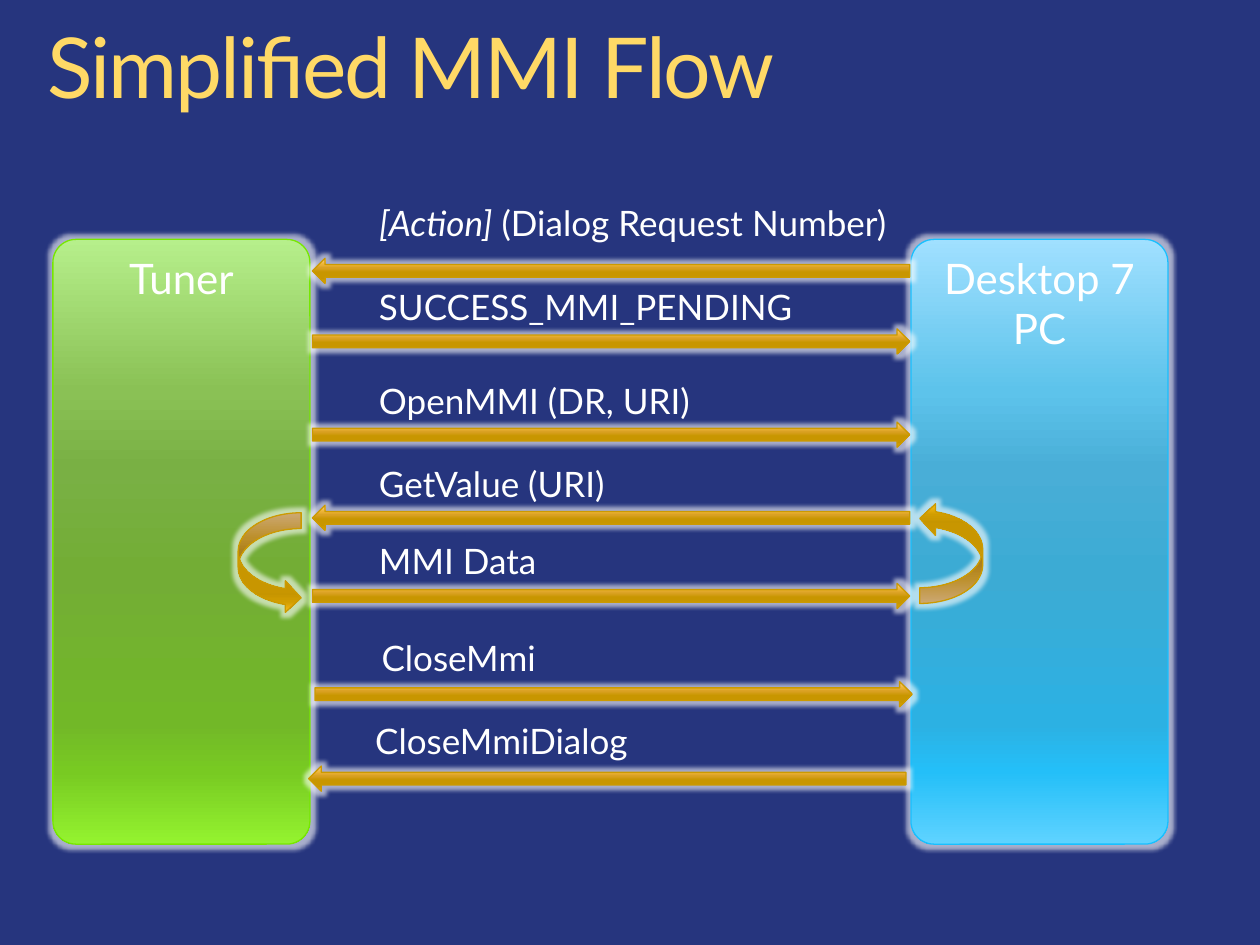
import pptx
import pptx.dml.color
import pptx.enum.shapes
import pptx.enum.text
import pptx.oxml
import pptx.oxml.ns
import pptx.util
from pptx.util import Inches

SHAPES = pptx.enum.shapes.MSO_SHAPE
FONT = "Lato"
NAMESPACE = pptx.oxml.ns.nsdecls("a")

STOPS = (0, 25, 38, 55, 80, 88, 100)
GREEN = list(zip(STOPS, "B6EF8B 8AC155 79B044 73AD35 72B828 78CA22 94F32F".split()))
BLUE = list(zip(STOPS, "A0E0FF 5DC3EB 49AED7 3CABD4 2CB1E3 24BFF8 5FD3FF".split()))
GOLD = list(zip(STOPS, "FFD390 ECB335 DAA123 C89600 C69500 D19D00 FFC018".split()))
TITLE_GRADIENT = [(0, "FFF2CC"), (41, "FFD966"), (100, "FFC000")]
GOLD_LINE = "CC9A00"

# label, label top, arrow shape, arrow left, arrow top
MESSAGES = [
    ("(Dialog Request Number)", 1.55, SHAPES.LEFT_ARROW, 2.48, 2.05),
    ("SUCCESS_MMI_PENDING", 2.22, SHAPES.RIGHT_ARROW, 2.48, 2.61),
    ("OpenMMI (DR, URI)", 2.96, SHAPES.RIGHT_ARROW, 2.48, 3.35),
    ("GetValue (URI)", 3.62, SHAPES.LEFT_ARROW, 2.48, 4.01),
    ("MMI Data", 4.23, SHAPES.RIGHT_ARROW, 2.48, 4.63),
    ("CloseMmi", 5.0, SHAPES.RIGHT_ARROW, 2.5, 5.41),
    ("CloseMmiDialog", 5.66, SHAPES.LEFT_ARROW, 2.45, 6.08),
]


def color(value):
    return pptx.dml.color.RGBColor.from_string(value)


def fill_gradient(fill, owner, stops):
    """Fill from top to bottom; owner is the XML element that holds the fill."""
    fill.gradient()
    fill.gradient_angle = 270
    stop_list = owner.find(".//" + pptx.oxml.ns.qn("a:gsLst"))
    for old_stop in list(stop_list):
        stop_list.remove(old_stop)
    for position, value in stops:
        stop_list.append(pptx.oxml.parse_xml(
            f'<a:gs {NAMESPACE} pos="{position * 1000}"><a:srgbClr val="{value}"/></a:gs>'))


def add_glow(shape):
    shape.shadow.inherit = False
    effects = shape._element.spPr.find(pptx.oxml.ns.qn("a:effectLst"))
    effects.append(pptx.oxml.parse_xml(
        f'<a:glow {NAMESPACE} rad="63500"><a:srgbClr val="FFFFFF">'
        '<a:alpha val="60000"/></a:srgbClr></a:glow>'))


def add_glowing_shape(page, kind, left, top, width, height, stops, line):
    shape = page.shapes.add_shape(
        kind, Inches(left), Inches(top), Inches(width), Inches(height))
    fill_gradient(shape.fill, shape._element.spPr, stops)
    shape.line.color.rgb = color(line)
    shape.line.width = pptx.util.Pt(0.75)
    add_glow(shape)
    return shape


def add_span(para, text, size, italic=None):
    span = para.add_run()
    span.text = text
    span.font.name = FONT
    span.font.size = pptx.util.Pt(size)
    span.font.italic = italic
    span.font.color.rgb = color("FFFFFF")
    return span


def add_text_box(page, left, top, width, height):
    box = page.shapes.add_textbox(
        Inches(left), Inches(top), Inches(width), Inches(height))
    box.text_frame.word_wrap = True
    return box.text_frame


def add_title(page, text):
    frame = add_text_box(page, 0.38, 0.21, 9.16, 0.73)
    frame.margin_left = frame.margin_right = 0
    frame.margin_top = frame.margin_bottom = 0
    para = frame.paragraphs[0]
    para.line_spacing = 0.9
    span = add_span(para, text, 48)
    properties = span.font._element
    fill_gradient(span.font.fill, properties, TITLE_GRADIENT)
    properties.set("spc", "-120")


def add_device(page, name, left, stops, line):
    card = add_glowing_shape(
        page, SHAPES.ROUNDED_RECTANGLE, left, 1.9, 2.04, 4.8, stops, line)
    card.adjustments[0] = 0.09
    frame = card.text_frame
    frame.word_wrap = True
    frame.vertical_anchor = pptx.enum.text.MSO_ANCHOR.TOP
    para = frame.paragraphs[0]
    para.alignment = pptx.enum.text.PP_ALIGN.CENTER
    add_span(para, name, 24)


def add_message(page, text, label_top, arrow, left, arrow_top, action=None):
    """A labelled arrow between the two devices."""
    add_glowing_shape(page, arrow, left, arrow_top, 4.74, 0.2, GOLD, GOLD_LINE)
    width = 4.75 if action else 4.17
    para = add_text_box(page, left + 0.43, label_top, width, 0.44).paragraphs[0]
    if action:
        add_span(para, action, 20, italic=True)
        text = " " + text
    add_span(para, text, 20)


def add_loop(page, kind, left, top):
    return add_glowing_shape(page, kind, left, top, 0.5, 0.8, GOLD, GOLD_LINE)


def main():
    deck = pptx.Presentation()
    deck.slide_width, deck.slide_height = Inches(10), Inches(7.5)
    page = deck.slides.add_slide(deck.slide_layouts[6])
    page.background.fill.solid()
    page.background.fill.fore_color.rgb = color("26357E")

    add_title(page, "Simplified MMI Flow")
    add_device(page, "Tuner", 0.42, GREEN, "77E700")
    add_device(page, "Desktop 7 PC", 7.23, BLUE, "18C0FF")

    add_message(page, *MESSAGES[0], action="[Action]")
    for message in MESSAGES[1:]:
        add_message(page, *message)

    add_loop(page, SHAPES.CURVED_RIGHT_ARROW, 1.89, 4.07)
    reply_loop = add_loop(page, SHAPES.CURVED_LEFT_ARROW, 7.3, 3.99)
    reply_loop._element.spPr.xfrm.set("flipV", "1")

    deck.save("out.pptx")


if __name__ == "__main__":
    main()
